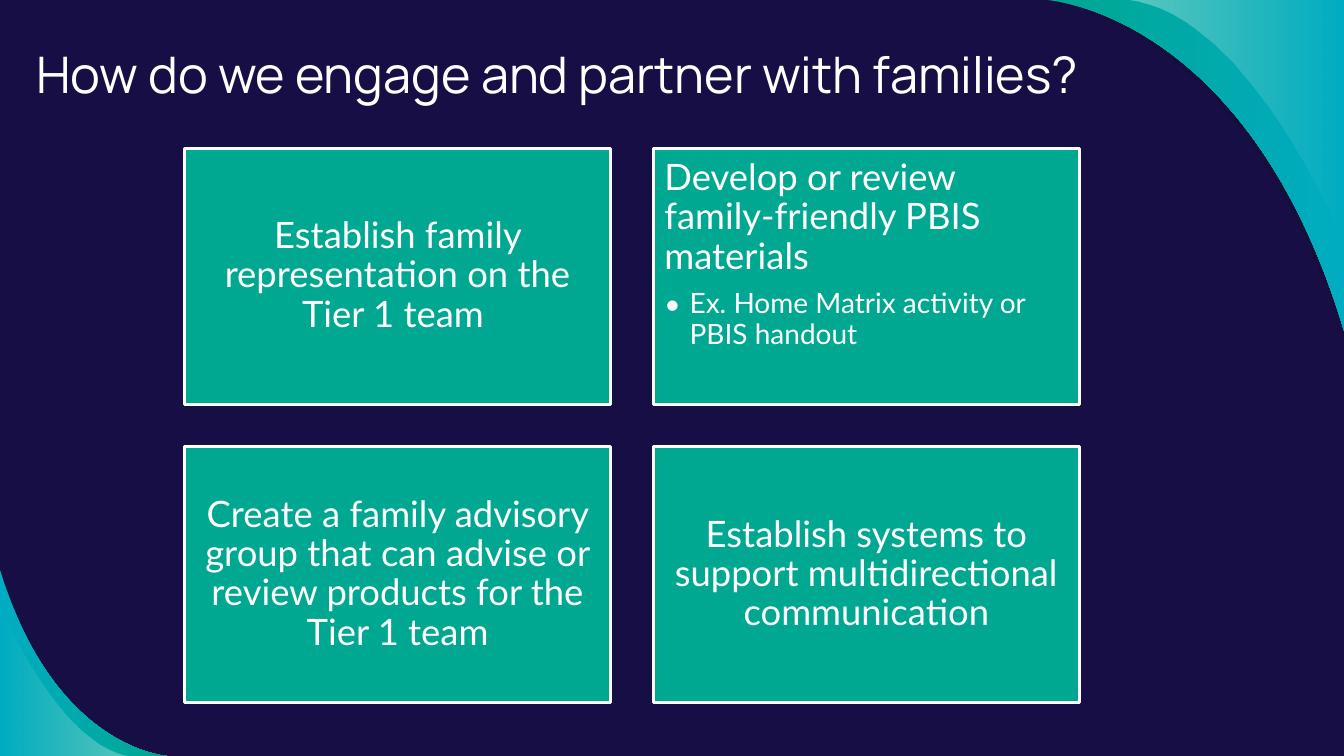
from dataclasses import dataclass

from lxml import etree
from pptx import Presentation
from pptx import util as u
from pptx.dml.color import RGBColor
from pptx.enum import shapes, text
from pptx.oxml import ns

NAVY = RGBColor(0x16, 0x0E, 0x44)
SHADE = RGBColor(0x12, 0x10, 0x2F)
CYAN = RGBColor(0x00, 0xAC, 0xC2)
TEAL = RGBColor(0x00, 0xA7, 0x91)
WHITE = RGBColor(0xFF, 0xFF, 0xFF)

WIDTH, HEIGHT = 13.33, 7.5
CARD_LEFT, CARD_TOP = 1.83, 1.47
CARD_WIDTH, CARD_HEIGHT = 4.23, 2.54
CARD_GAP = 0.42

Point = tuple[float, float]


@dataclass
class Swoosh:
    """A slide corner closed off by one Bezier curve; colours run left to right."""
    corner: Point
    curve: tuple[Point, Point, Point, Point]
    colors: tuple[RGBColor, ...]
    opacities: tuple[int, ...]


@dataclass
class Card:
    heading: str
    bullet: str = ""


TOP_RIGHT: Point = (WIDTH, 0)
BOTTOM_LEFT: Point = (0, HEIGHT)

SWOOSHES = [
    Swoosh(TOP_RIGHT, ((10.31, 0), (10.31, 0), (12.35, 0.11), (WIDTH, 3.37)),
           (SHADE,), (54,)),
    Swoosh(TOP_RIGHT, ((10.38, 0), (10.38, 0), (12.38, 0.11), (WIDTH, 3.28)),
           (TEAL, CYAN), (100, 100)),
    Swoosh(TOP_RIGHT, ((11.18, 0), (12.42, 0.15), (WIDTH, 2.44), (WIDTH, 2.44)),
           (WHITE, WHITE), (36, 0)),
    Swoosh(BOTTOM_LEFT, ((0, 5.65), (0.54, 7.44), (1.66, HEIGHT), (1.66, HEIGHT)),
           (CYAN, TEAL), (100, 100)),
    Swoosh(BOTTOM_LEFT, ((0, 6.01), (0, 6.01), (0.56, 7.41), (1.32, HEIGHT)),
           (WHITE, WHITE), (0, 36)),
]

CARDS = [
    Card("Establish family representation on the Tier 1 team "),
    Card("Develop or review family-friendly PBIS materials",
         "Ex. Home Matrix activity or PBIS handout"),
    Card("Create a family advisory group that can advise or review products "
         "for the Tier 1 team"),
    Card("Establish systems to support multidirectional communication"),
]


def bend_first_segments(shape) -> None:
    """Turn the first three line segments of an outline into one Bezier curve."""
    segments = list(shape.element.spPr.iter(ns.qn("a:lnTo")))[:3]
    curve = etree.Element(ns.qn("a:cubicBezTo"))
    segments[0].addprevious(curve)
    for segment in segments:
        curve.append(segment[0])
        segment.getparent().remove(segment)


def draw_swoosh(slide, swoosh: Swoosh):
    start, *rest = [(u.Inches(x), u.Inches(y)) for x, y in (*swoosh.curve, swoosh.corner)]
    builder = slide.shapes.build_freeform(*start)
    builder.add_line_segments(rest, close=True)
    shape = builder.convert_to_shape()
    bend_first_segments(shape)
    shape.shadow.inherit = False
    shape.line.fill.background()
    if len(swoosh.colors) == 1:
        shape.fill.solid()
        shape.fill.fore_color.rgb = swoosh.colors[0]
    else:
        shape.fill.gradient()
        shape.fill.gradient_angle = 0
        for stop, color in zip(shape.fill.gradient_stops, swoosh.colors):
            stop.color.rgb = color
    # Transparency
    color_elements = shape.element.spPr.iter(ns.qn("a:srgbClr"))
    for element, opacity in zip(list(color_elements), swoosh.opacities):
        if opacity < 100:
            etree.SubElement(element, ns.qn("a:alpha"), val=str(opacity * 1000))
    return shape


def write_text(paragraph, content: str, *, size: float, font: str = "Lato",
               align=text.PP_ALIGN.LEFT, line_spacing: float = 0.9,
               space_after: float = 0, bullet: bool = False) -> None:
    paragraph.alignment = align
    paragraph.line_spacing = line_spacing
    paragraph.space_before = u.Pt(0)
    paragraph.space_after = u.Pt(space_after)
    run = paragraph.add_run()
    run.text = content
    run.font.size = u.Pt(size)
    run.font.name = font
    run.font.color.rgb = WHITE
    if bullet:
        paragraph.level = 1
        properties = paragraph._p.get_or_add_pPr()
        properties.set("marL", str(u.Inches(0.25)))
        properties.set("indent", str(-u.Inches(0.25)))
        etree.SubElement(properties, ns.qn("a:buFont"), typeface=font)
        etree.SubElement(properties, ns.qn("a:buChar"), char="•")


def set_frame(frame, inset: float, anchor) -> None:
    frame.word_wrap = True
    frame.auto_size = text.MSO_AUTO_SIZE.NONE
    frame.vertical_anchor = anchor
    frame.margin_left = frame.margin_right = u.Inches(inset)
    frame.margin_top = frame.margin_bottom = u.Inches(inset)


def draw_card(slide, card: Card, index: int) -> None:
    row, column = divmod(index, 2)
    shape = slide.shapes.add_shape(
        shapes.MSO_SHAPE.RECTANGLE,
        u.Inches(CARD_LEFT + column * (CARD_WIDTH + CARD_GAP)),
        u.Inches(CARD_TOP + row * (CARD_HEIGHT + CARD_GAP)),
        u.Inches(CARD_WIDTH), u.Inches(CARD_HEIGHT))
    shape.shadow.inherit = False
    shape.fill.solid()
    shape.fill.fore_color.rgb = TEAL
    shape.line.color.rgb = WHITE
    shape.line.width = u.Pt(2)

    frame = shape.text_frame
    anchor = text.MSO_ANCHOR.TOP if card.bullet else text.MSO_ANCHOR.MIDDLE
    align = text.PP_ALIGN.LEFT if card.bullet else text.PP_ALIGN.CENTER
    set_frame(frame, 0.11, anchor)
    write_text(frame.paragraphs[0], card.heading, size=26, align=align, space_after=9)
    if card.bullet:
        write_text(frame.add_paragraph(), card.bullet, size=20, space_after=3, bullet=True)


def main() -> None:
    presentation = Presentation()
    presentation.slide_width = u.Inches(WIDTH)
    presentation.slide_height = u.Inches(HEIGHT)
    slide = presentation.slides.add_slide(presentation.slide_layouts.get_by_name("Title Only"))
    slide.background.fill.solid()
    slide.background.fill.fore_color.rgb = NAVY

    # Corner decoration
    decoration = [draw_swoosh(slide, swoosh) for swoosh in SWOOSHES]

    # Title, in front of the decoration
    title = slide.shapes.title
    title.left, title.top = u.Inches(0.26), u.Inches(0.33)
    title.width, title.height = u.Inches(12.8), u.Inches(0.92)
    set_frame(title.text_frame, 0.1, text.MSO_ANCHOR.TOP)
    write_text(title.text_frame.paragraphs[0], "How do we engage and partner with families?",
               size=36, font="Manrope", line_spacing=1.0)
    decoration[-1].element.addnext(title.element)

    # Cards in a two-by-two grid
    for index, card in enumerate(CARDS):
        draw_card(slide, card, index)

    presentation.save("out.pptx")


if __name__ == "__main__":
    main()
